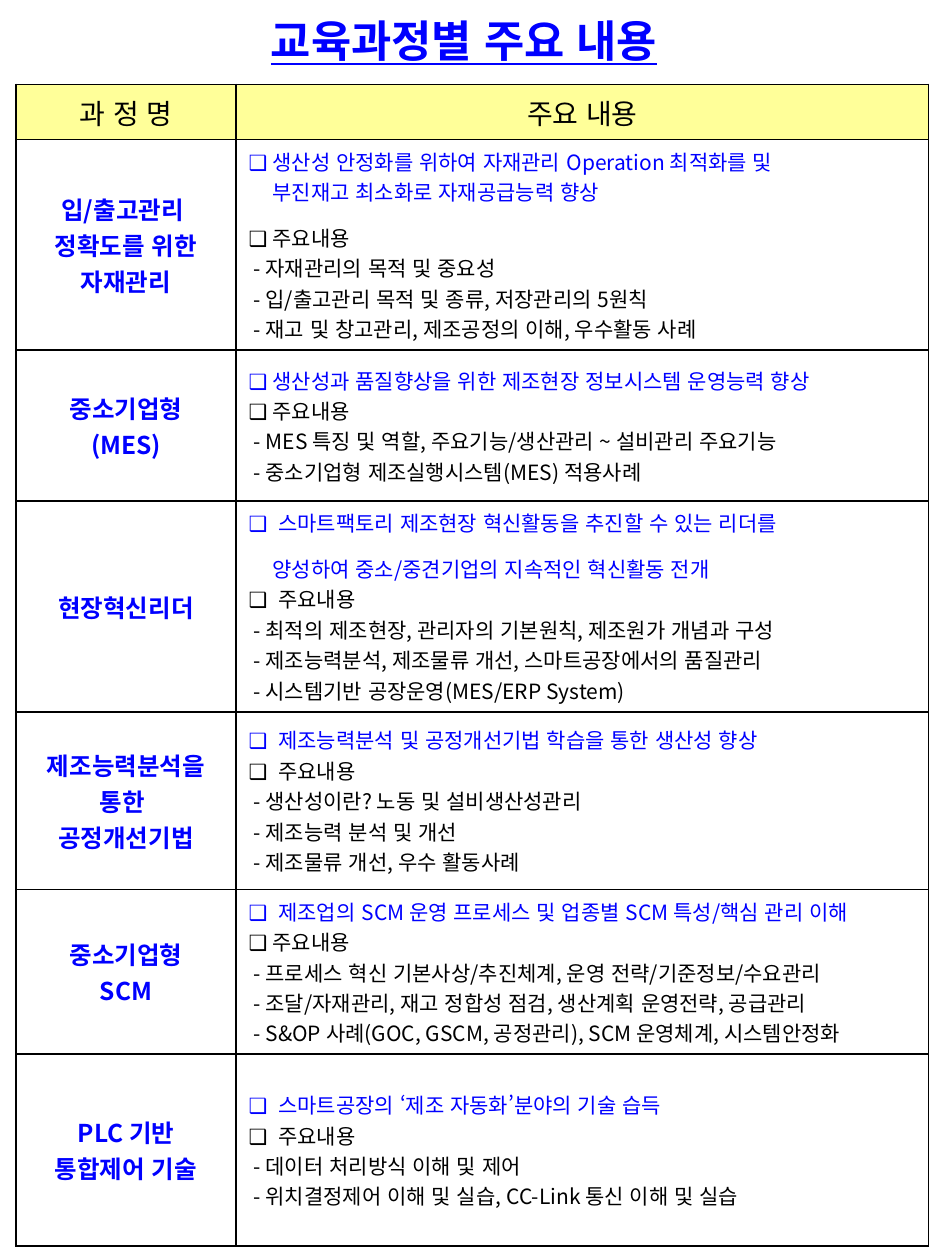
from dataclasses import dataclass

import pptx
import pptx.dml.color
import pptx.enum.text
import pptx.oxml
import pptx.oxml.ns
import pptx.util
from lxml import etree

Cm, Pt = pptx.util.Cm, pptx.util.Pt
Align, Anchor = pptx.enum.text.PP_ALIGN, pptx.enum.text.MSO_ANCHOR
qn = pptx.oxml.ns.qn

FONT = "Noto Sans CJK KR"
COLORS = {"blue": "0000FF", "black": "000000", "yellow": "FFFF99"}
HANG = Cm(0.48)
INSET = Cm(0.1)


@dataclass
class Line:
    text: str
    color: str = "black"
    size: float = 12
    bold: bool = False
    align: Align = Align.LEFT
    left: int = 0
    bullet: bool = False
    space: float = 1.0


@dataclass
class Course:
    high: float
    name: list[str]
    goal: str
    items: list[str]
    more: str = ""
    head: str = "주요내용"
    more_gap: float = 1.0
    head_gap: float = 1.0

    def names(self) -> list[Line]:
        return [Line(text, "blue", 14, True, Align.CENTER) for text in self.name]

    def lines(self) -> list[Line]:
        goals = [Line(self.goal, "blue", left=HANG, bullet=True)]
        if self.more:
            goals.append(Line(self.more, "blue", left=HANG, space=self.more_gap))
        head = Line(self.head, left=HANG, bullet=True, space=self.head_gap)
        return goals + [head] + [Line("- " + item, left=INSET) for item in self.items]


COURSES = [
    Course(4.25, ["입/출고관리 ", "정확도를 위한", "자재관리"],
           "생산성 안정화를 위하여 자재관리 Operation 최적화를 및",
           ["자재관리의 목적 및 중요성",
            "입/출고관리 목적 및 종류, 저장관리의 5원칙",
            "재고 및 창고관리, 제조공정의 이해, 우수활동 사례"],
           more="부진재고 최소화로 자재공급능력 향상", head_gap=1.5),
    Course(3.04, ["중소기업형", "(MES)"],
           "생산성과 품질향상을 위한 제조현장 정보시스템 운영능력 향상",
           ["MES 특징 및 역할, 주요기능/생산관리 ~ 설비관리 주요기능",
            "중소기업형 제조실행시스템(MES) 적용사례"]),
    Course(4.25, ["현장혁신리더"],
           " 스마트팩토리 제조현장 혁신활동을 추진할 수 있는 리더를",
           ["최적의 제조현장, 관리자의 기본원칙, 제조원가 개념과 구성",
            "제조능력분석, 제조물류 개선, 스마트공장에서의 품질관리",
            "시스템기반 공장운영(MES/ERP System)"],
           more="양성하여 중소/중견기업의 지속적인 혁신활동 전개",
           head=" 주요내용", more_gap=1.5),
    Course(3.58, ["제조능력분석을", "통한 ", "공정개선기법"],
           " 제조능력분석 및 공정개선기법 학습을 통한 생산성 향상",
           ["생산성이란? 노동 및 설비생산성관리",
            "제조능력 분석 및 개선",
            "제조물류 개선, 우수 활동사례"], head=" 주요내용"),
    Course(3.32, ["중소기업형", "SCM"],
           " 제조업의 SCM 운영 프로세스 및 업종별 SCM 특성/핵심 관리 이해",
           ["프로세스 혁신 기본사상/추진체계, 운영 전략/기준정보/수요관리",
            "조달/자재관리, 재고 정합성 점검, 생산계획 운영전략, 공급관리",
            "S&OP 사례(GOC, GSCM, 공정관리), SCM 운영체계, 시스템안정화"]),
    Course(3.87, ["PLC 기반", "통합제어 기술"],
           " 스마트공장의 ‘제조 자동화’분야의 기술 습득",
           ["데이터 처리방식 이해 및 제어",
            "위치결정제어 이해 및 실습, CC-Link 통신 이해 및 실습"],
           head=" 주요내용"),
]


def rgb(name: str) -> pptx.dml.color.RGBColor:
    return pptx.dml.color.RGBColor.from_string(COLORS[name])


def write(frame, lines: list[Line]) -> None:
    for i, line in enumerate(lines):
        para = frame.add_paragraph() if i else frame.paragraphs[0]
        para.text = line.text
        para.alignment = line.align
        para.line_spacing = line.space
        font = para.font
        font.name, font.size, font.bold = FONT, Pt(line.size), line.bold
        font.color.rgb = rgb(line.color)
        props = para._p.get_or_add_pPr()
        base = props.find(qn("a:defRPr"))
        base.set("kern", "0")
        base.set("lang", "ko-KR")
        base.set("altLang", "en-US")
        etree.SubElement(base, qn("a:ea"), typeface=FONT)
        for run in para.runs:
            run.font.language_id = pptx.enum.lang.MSO_LANGUAGE_ID.KOREAN
        props.set("marL", str(line.left))
        props.set("indent", str(-line.left if line.bullet else 0))
        if line.bullet:
            base.addprevious(etree.Element(qn("a:buFont"), typeface=FONT))
            base.addprevious(etree.Element(qn("a:buChar"), char="❑"))


def frame_cell(cell) -> None:
    """Draw a thin black border on all four sides."""
    props = cell._tc.get_or_add_tcPr()
    for side in ("lnL", "lnR", "lnT", "lnB"):
        edge = etree.SubElement(props, qn("a:" + side), w=str(Pt(1)))
        fill = etree.SubElement(edge, qn("a:solidFill"))
        etree.SubElement(fill, qn("a:srgbClr"), val=COLORS["black"])


def fill_cell(cell, lines: list[Line], color: str = "") -> None:
    frame_cell(cell)
    if color:
        cell.fill.solid()
        cell.fill.fore_color.rgb = rgb(color)
    else:
        cell.fill.background()
    cell.vertical_anchor = Anchor.MIDDLE
    write(cell.text_frame, lines)


def add_title(slide, text: str) -> None:
    title = slide.shapes.title
    title.left, title.top = Cm(0.91), Cm(0.15)
    title.width, title.height = Cm(16.89), Cm(1.32)
    frame = title.text_frame
    frame.auto_size = pptx.enum.text.MSO_AUTO_SIZE.SHAPE_TO_FIT_TEXT
    frame.vertical_anchor = Anchor.TOP
    write(frame, [Line(text, "blue", 25, True, Align.CENTER)])
    frame.paragraphs[0].font.underline = True


def add_grid(slide, courses: list[Course]) -> None:
    widths = [4.44, 13.96]
    highs = [1.11] + [course.high for course in courses]
    grid = slide.shapes.add_table(len(highs), len(widths), Cm(0.32), Cm(1.7),
                                  Cm(sum(widths)), Cm(sum(highs))).table
    for col, width in zip(grid.columns, widths):
        col.width = Cm(width)
    for row, high in zip(grid.rows, highs):
        row.height = Cm(high)
    for i, text in enumerate(["과 정 명", "주요 내용"]):
        fill_cell(grid.cell(0, i), [Line(text, size=16, align=Align.CENTER)], "yellow")
    for i, course in enumerate(courses, 1):
        fill_cell(grid.cell(i, 0), course.names())
        fill_cell(grid.cell(i, 1), course.lines())


def main() -> None:
    deck = pptx.Presentation()
    deck.slide_width, deck.slide_height = Cm(19.05), Cm(25.4)
    slide = deck.slides.add_slide(deck.slide_layouts[5])
    add_title(slide, "교육과정별 주요 내용")
    add_grid(slide, COURSES)
    deck.save("out.pptx")


if __name__ == "__main__":
    main()
